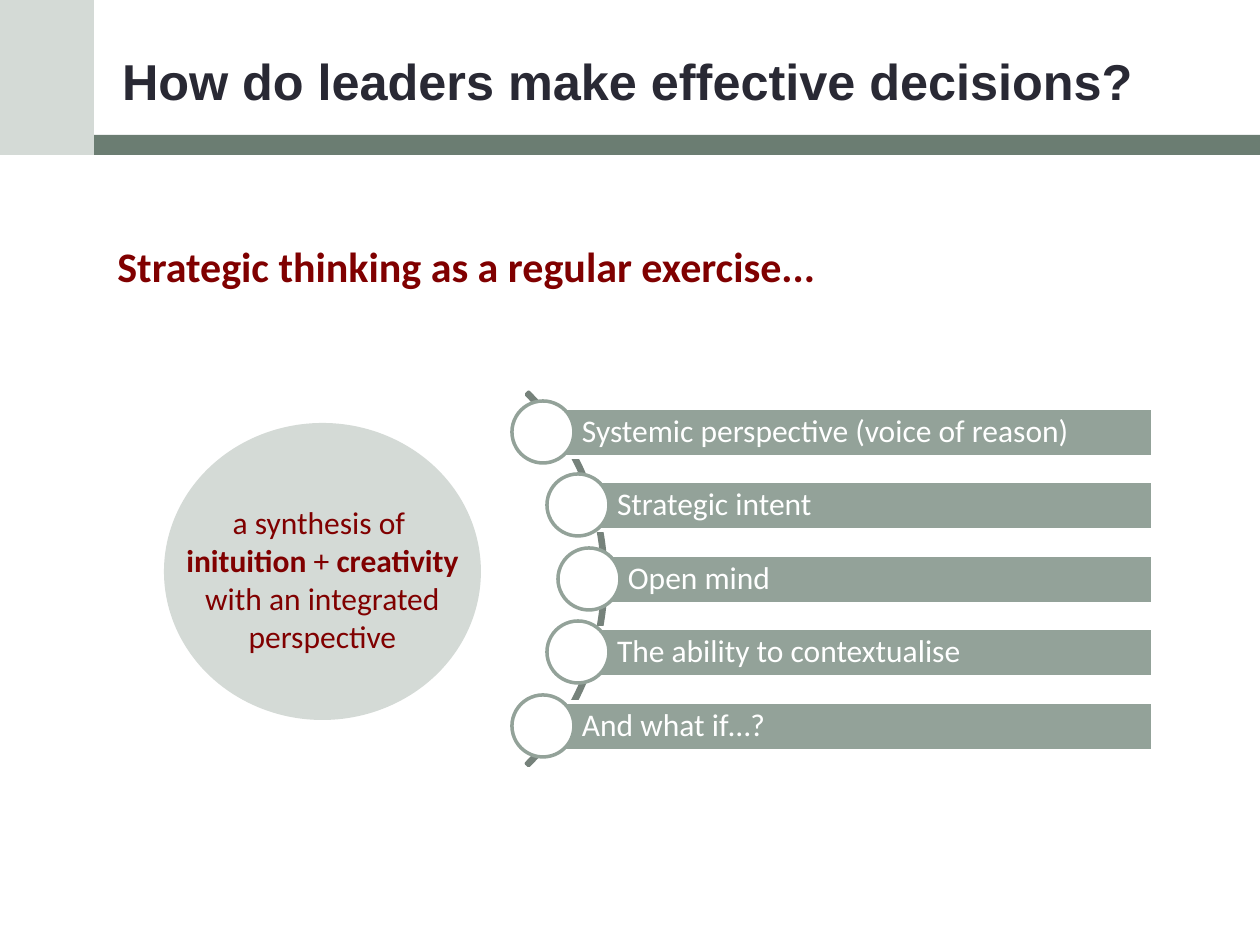
from dataclasses import dataclass

from pptx import Presentation
from pptx import util as u
from pptx.dml.color import RGBColor
from pptx.enum import shapes, text

PX = 914400 / 126
PALE, SAGE, DARK = "D4DAD6", "93A299", "6B7D72"
ARC, WHITE, INK, MAROON = "76827B", "FFFFFF", "292934", "800000"
OVAL = shapes.MSO_SHAPE.OVAL
RECTANGLE = shapes.MSO_SHAPE.RECTANGLE


@dataclass
class Point:
    label: str
    center_x: int


POINTS = [
    Point("Systemic perspective (voice of reason)", 543),
    Point("Strategic intent", 578),
    Point("Open mind", 589),
    Point("The ability to contextualise", 578),
    Point("And what if…?", 543),
]
FIRST_CENTER, LAST_CENTER = 432, 726
BAR_RIGHT, BAR_HEIGHT, DOT_SIZE = 1153, 49, 62


def px(value: int) -> int:
    return round(value * PX)


def color(value: str) -> RGBColor:
    return RGBColor.from_string(value)


def add_shape(parent, kind, left: int, top: int, width: int, height: int, fill: str, line: str = ""):
    shape = parent.add_shape(kind, px(left), px(top), px(width), px(height))
    shape.shadow.inherit = False
    shape.fill.solid()
    shape.fill.fore_color.rgb = color(fill)
    if line:
        shape.line.color.rgb = color(line)
        shape.line.width = u.Pt(2)
    else:
        shape.line.fill.background()
    return shape


def add_text_box(parent, left: int, top: int, width: int, height: int):
    box = parent.add_textbox(px(left), px(top), px(width), px(height))
    box.text_frame.word_wrap = True
    return box.text_frame


def format_runs(paragraph, size: float, value: str, bold: bool = False, font: str = "Calibri") -> None:
    for run in paragraph.runs:
        run.font.name = font
        run.font.size = u.Pt(size)
        run.font.bold = bold
        run.font.color.rgb = color(value)


def add_title(slide) -> None:
    title = slide.shapes.title
    title.left, title.top, title.width, title.height = px(10), px(13), px(1166), px(134)
    frame = title.text_frame
    frame.text = "How do leaders make effective decisions?"
    frame.auto_size = text.MSO_AUTO_SIZE.NONE
    frame.vertical_anchor = text.MSO_ANCHOR.MIDDLE
    frame.margin_left = px(112)
    paragraph = frame.paragraphs[0]
    paragraph.alignment = text.PP_ALIGN.LEFT
    format_runs(paragraph, 28.8, INK, True, "Arial")


def add_point(parent, point: Point, center_y: int) -> None:
    bar = add_shape(parent, RECTANGLE, point.center_x, center_y - BAR_HEIGHT // 2,
                    BAR_RIGHT - point.center_x, BAR_HEIGHT, SAGE, WHITE)
    frame = bar.text_frame
    frame.text = point.label
    frame.vertical_anchor = text.MSO_ANCHOR.MIDDLE
    frame.margin_left = px(39)
    frame.margin_right = frame.margin_top = frame.margin_bottom = px(6)
    paragraph = frame.paragraphs[0]
    paragraph.alignment = text.PP_ALIGN.LEFT
    paragraph.line_spacing = 0.9
    format_runs(paragraph, 18, WHITE)
    add_shape(parent, OVAL, point.center_x - DOT_SIZE // 2, center_y - DOT_SIZE // 2,
              DOT_SIZE, DOT_SIZE, WHITE, SAGE)


def add_points(slide) -> None:
    group = slide.shapes.add_group_shape().shapes
    arc = add_shape(group, shapes.MSO_SHAPE.BLOCK_ARC, 78, 315, 528, 528, ARC, ARC)
    for index, value in enumerate((189, 27, 0.006)):
        arc.adjustments[index] = value
    for index, point in enumerate(POINTS):
        step = (LAST_CENTER - FIRST_CENTER) * index // (len(POINTS) - 1)
        add_point(group, point, FIRST_CENTER + step)


def add_synthesis(slide) -> None:
    frame = add_text_box(slide.shapes, 146, 497, 353, 204)
    paragraph = frame.paragraphs[0]
    paragraph.text = "a synthesis of \v"
    paragraph.alignment = text.PP_ALIGN.CENTER
    for words in ("inituition ", "+ ", "creativity ", "with an integrated perspective"):
        paragraph.add_run().text = words
    format_runs(paragraph, 18, MAROON)
    for run in paragraph.runs:
        run.font.bold = run.text in ("inituition ", "creativity ")


def main() -> None:
    presentation = Presentation()
    presentation.slide_width, presentation.slide_height = px(1260), px(945)
    slide = presentation.slides.add_slide(presentation.slide_layouts[5])
    add_shape(slide.shapes, OVAL, 164, 423, 317, 297, PALE)
    add_shape(slide.shapes, RECTANGLE, 94, 135, 1166, 20, DARK)
    add_shape(slide.shapes, RECTANGLE, 0, 0, 94, 155, PALE)
    add_title(slide)
    heading = add_text_box(slide.shapes, 105, 234, 963, 63)
    heading.text = "Strategic thinking as a regular exercise..."
    format_runs(heading.paragraphs[0], 24, MAROON, True)
    add_points(slide)
    add_synthesis(slide)
    presentation.save("out.pptx")


if __name__ == "__main__":
    main()
